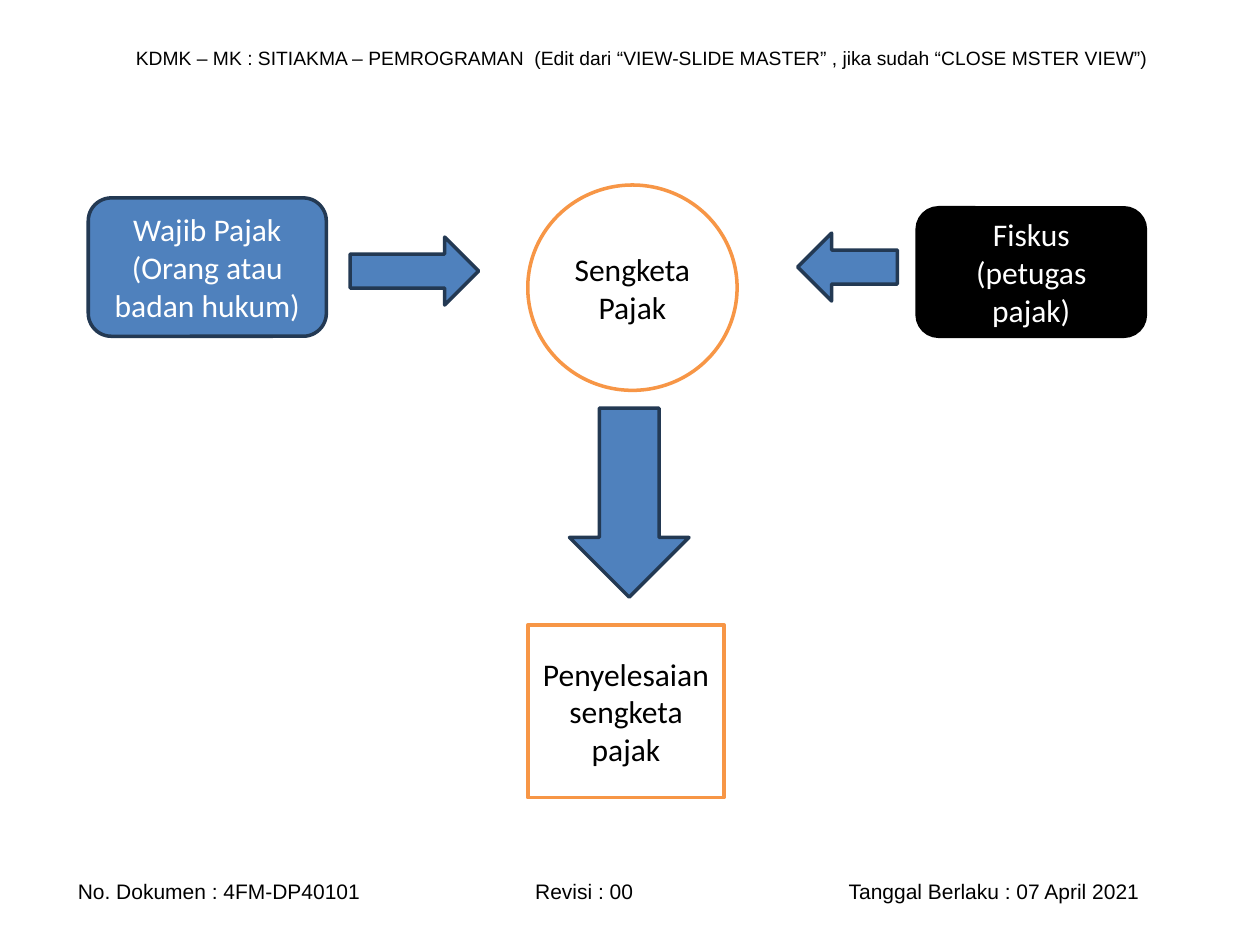
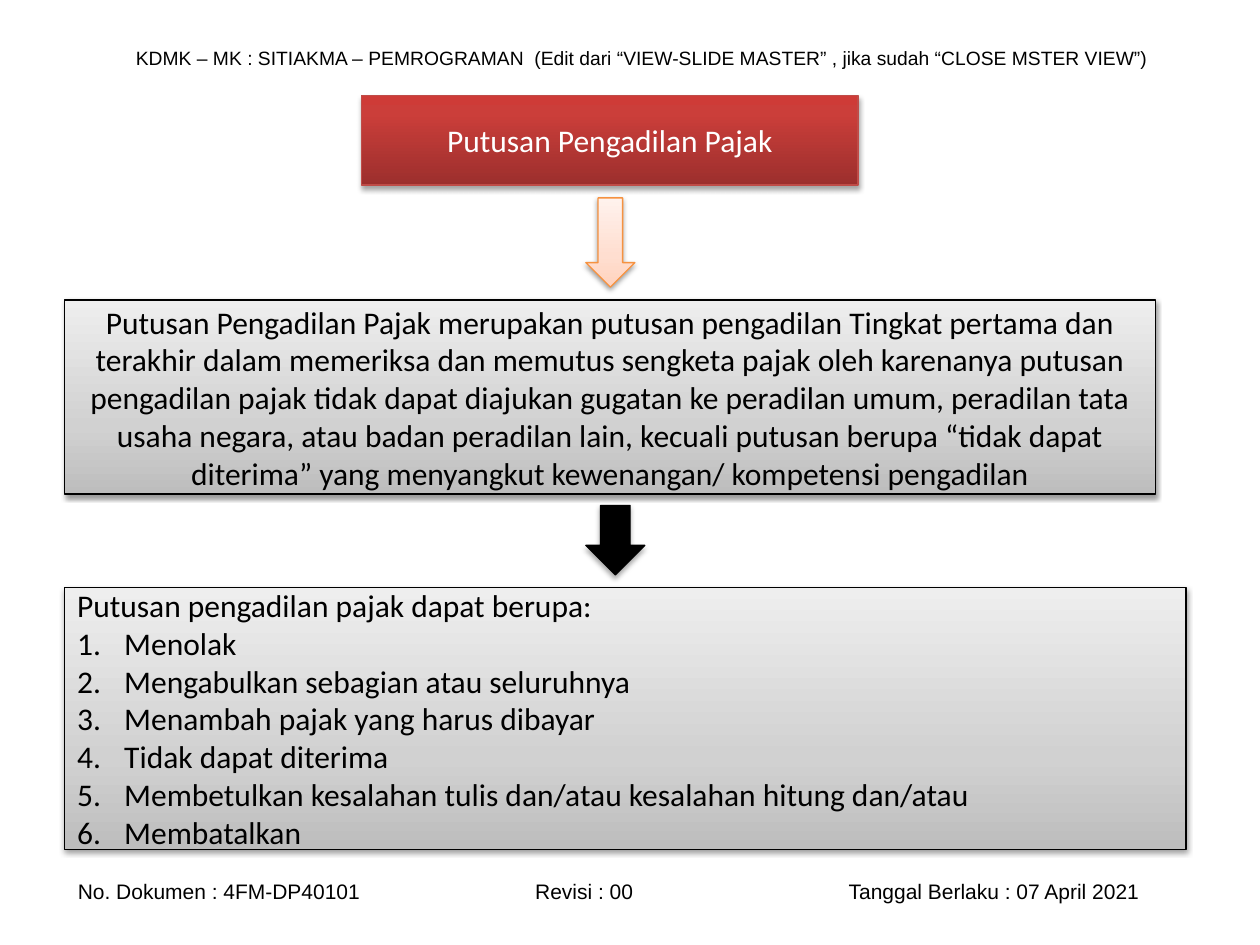
from lxml import etree
from pptx import Presentation
from pptx.dml.color import RGBColor
from pptx.enum.shapes import MSO_SHAPE
from pptx.enum.text import MSO_ANCHOR, MSO_AUTO_SIZE, PP_ALIGN
from pptx.oxml.ns import qn
from pptx.util import Cm, Pt

RECTANGLE = MSO_SHAPE.RECTANGLE
ROUNDED = MSO_SHAPE.ROUNDED_RECTANGLE
ELLIPSE = MSO_SHAPE.OVAL
RIGHT_ARROW = MSO_SHAPE.RIGHT_ARROW
LEFT_ARROW = MSO_SHAPE.LEFT_ARROW
DOWN_ARROW = MSO_SHAPE.DOWN_ARROW
CENTER = PP_ALIGN.CENTER
LEFT = PP_ALIGN.LEFT

BLACK, WHITE = "000000", "FFFFFF"
BLUE, NAVY, ORANGE = "4F81BD", "233953", "F79646"
RED_GRADIENT = [(0, "9C2F2D"), (80, "CB3E3A"), (100, "CE3B37")]
PEACH_GRADIENT = [(0, "FFD2BD"), (35, "FFDED0"), (100, "FFF2ED")]
GRAY_GRADIENT = [(0, "BDBDBD"), (35, "D1D1D1"), (100, "EEEEEE")]
STRONG_SHADOW = {"opacity": 35, "distance": 1.8}
SOFT_SHADOW = {"opacity": 38, "distance": 1.6}
FRAME_FORMAT = {
    "word_wrap": True,
    "auto_size": MSO_AUTO_SIZE.NONE,
    "vertical_anchor": MSO_ANCHOR.MIDDLE,
}


def paint(shape, fill, line, width, shadow=None):
    if isinstance(fill, str):
        shape.fill.solid()
        shape.fill.fore_color.rgb = RGBColor.from_string(fill)
    else:
        shape.fill.gradient()
        shape.fill.gradient_angle = 90
        stops = shape.element.xpath(".//a:gsLst")[0]
        for stop in list(stops):
            stops.remove(stop)
        for position, color in fill:
            stop = etree.SubElement(stops, qn("a:gs"), pos=str(position * 1000))
            etree.SubElement(stop, qn("a:srgbClr"), val=color)
    shape.line.color.rgb = RGBColor.from_string(line)
    shape.line.width = Pt(width)
    shape.shadow.inherit = False
    if shadow:
        effects = shape.element.xpath("./p:spPr/a:effectLst")[0]
        outer = etree.SubElement(
            effects, qn("a:outerShdw"), blurRad=str(Pt(3.1)),
            dist=str(Pt(shadow["distance"])), dir="5400000", rotWithShape="0")
        color = etree.SubElement(outer, qn("a:srgbClr"), val=BLACK)
        etree.SubElement(color, qn("a:alpha"), val=str(shadow["opacity"] * 1000))


def write(shape, lines, color, alignment=CENTER, size=18, font="Calibri"):
    frame = shape.text_frame
    for name, value in FRAME_FORMAT.items():
        setattr(frame, name, value)
    paragraph_format = {"alignment": alignment, "space_before": Pt(0)}
    font_format = {"name": font, "size": Pt(size)}
    for index, line in enumerate(lines):
        paragraph = frame.paragraphs[0] if index == 0 else frame.add_paragraph()
        for name, value in paragraph_format.items():
            setattr(paragraph, name, value)
        run = paragraph.add_run()
        run.text = line
        for name, value in font_format.items():
            setattr(run.font, name, value)
        run.font.color.rgb = RGBColor.from_string(color)


presentation = Presentation()
presentation.slide_width = Cm(25.4)
presentation.slide_height = Cm(19.05)
dispute_slide = presentation.slides.add_slide(presentation.slide_layouts[6])
verdict_slide = presentation.slides.add_slide(presentation.slide_layouts[1])

bands = [
    ("KDMK – MK : SITIAKMA – PEMROGRAMAN  (Edit dari “VIEW-SLIDE MASTER” , jika sudah “CLOSE MSTER VIEW”)",
     (2.49, 0.79, 21.21, 0.74), 11, []),
    ("No. Dokumen : 4FM-DP40101\tRevisi : 00\tTanggal Berlaku : 07 April 2021",
     (1.32, 17.58, 23.19, 0.76), 12, [9.22, 15.54]),
]
for number, (text, place, size, tabs) in enumerate(bands, 101):
    band = dispute_slide.shapes.add_textbox(*map(Cm, place))
    if tabs:
        properties = band.text_frame.paragraphs[0]._p.get_or_add_pPr()
        tab_list = etree.SubElement(properties, qn("a:tabLst"))
        for tab in tabs:
            etree.SubElement(tab_list, qn("a:tab"), pos=str(Cm(tab)), algn="l")
    write(band, [text], BLACK, LEFT, size, "Arial")
    band.element.xpath(".//p:cNvPr")[0].set("id", str(number))
    presentation.slide_master.shapes.element.append(band.element)

dispute_shapes = [
    (ROUNDED, (1.78, 3.99, 4.8, 2.79), BLUE, NAVY, WHITE,
     ["Wajib Pajak", "(Orang atau badan hukum)"]),
    (ROUNDED, (18.49, 4.19, 4.6, 2.59), BLACK, BLACK, WHITE, ["Fiskus (petugas pajak)"]),
    (RIGHT_ARROW, (7.06, 4.78, 2.59, 1.37), BLUE, NAVY, WHITE, []),
    (LEFT_ARROW, (16.08, 4.7, 2.01, 1.37), BLUE, NAVY, WHITE, []),
    (ELLIPSE, (10.64, 3.73, 4.22, 4.14), WHITE, ORANGE, BLACK, ["Sengketa Pajak"]),
    (DOWN_ARROW, (11.48, 8.23, 2.41, 3.81), BLUE, NAVY, WHITE, []),
    (RECTANGLE, (10.64, 12.6, 3.96, 3.48), WHITE, ORANGE, BLACK,
     ["Penyelesaian sengketa pajak"]),
]
for kind, place, fill, line, color, lines in dispute_shapes:
    shape = dispute_slide.shapes.add_shape(kind, *map(Cm, place))
    paint(shape, fill, line, 2)
    write(shape, lines, color)

title = verdict_slide.shapes.title
outcomes = verdict_slide.placeholders[1]
placeholder_places = [
    (title, (7.29, 1.93, 10.01, 1.8)),
    (outcomes, (1.3, 11.84, 22.61, 5.28)),
]
for placeholder, place in placeholder_places:
    for name, value in zip(("left", "top", "width", "height"), place):
        setattr(placeholder, name, Cm(value))

paint(title, RED_GRADIENT, "BF4C48", 0.75, STRONG_SHADOW)
write(title, ["Putusan Pengadilan Pajak"], WHITE)

verdict_shapes = [
    (DOWN_ARROW, (11.81, 3.99, 0.99, 1.8), PEACH_GRADIENT, "F69240", SOFT_SHADOW, []),
    (RECTANGLE, (1.3, 6.05, 22, 3.91), GRAY_GRADIENT, BLACK, SOFT_SHADOW,
     ["Putusan Pengadilan Pajak merupakan putusan pengadilan Tingkat pertama dan "
      "terakhir dalam memeriksa dan memutus sengketa pajak oleh karenanya putusan "
      "pengadilan pajak tidak dapat diajukan gugatan ke peradilan umum, peradilan tata "
      "usaha negara, atau badan peradilan lain, kecuali putusan berupa “tidak dapat "
      "diterima” yang menyangkut kewenangan/ kompetensi pengadilan"]),
    (DOWN_ARROW, (11.81, 10.19, 1.19, 1.4), BLACK, BLACK, STRONG_SHADOW, []),
]
for kind, place, fill, line, shadow, lines in verdict_shapes:
    shape = verdict_slide.shapes.add_shape(kind, *map(Cm, place))
    paint(shape, fill, line, 0.75, shadow)
    write(shape, lines, BLACK)

paint(outcomes, GRAY_GRADIENT, BLACK, 0.75, SOFT_SHADOW)
write(outcomes, [
    "Putusan pengadilan pajak dapat berupa:",
    "Menolak",
    "Mengabulkan sebagian atau seluruhnya",
    "Menambah pajak yang harus dibayar",
    "Tidak dapat diterima",
    "Membetulkan kesalahan tulis dan/atau kesalahan hitung dan/atau",
    "Membatalkan",
], BLACK, LEFT)
for index, paragraph in enumerate(outcomes.text_frame.paragraphs):
    properties = paragraph._p.get_or_add_pPr()
    indent = Cm(0.95) if index else 0
    properties.set("marL", str(indent))
    properties.set("indent", str(-indent))
    if index:
        etree.SubElement(properties, qn("a:buFont"), typeface="+mj-lt")
        etree.SubElement(properties, qn("a:buAutoNum"), type="arabicPeriod")
    else:
        etree.SubElement(properties, qn("a:buNone"))

presentation.save("out.pptx")
